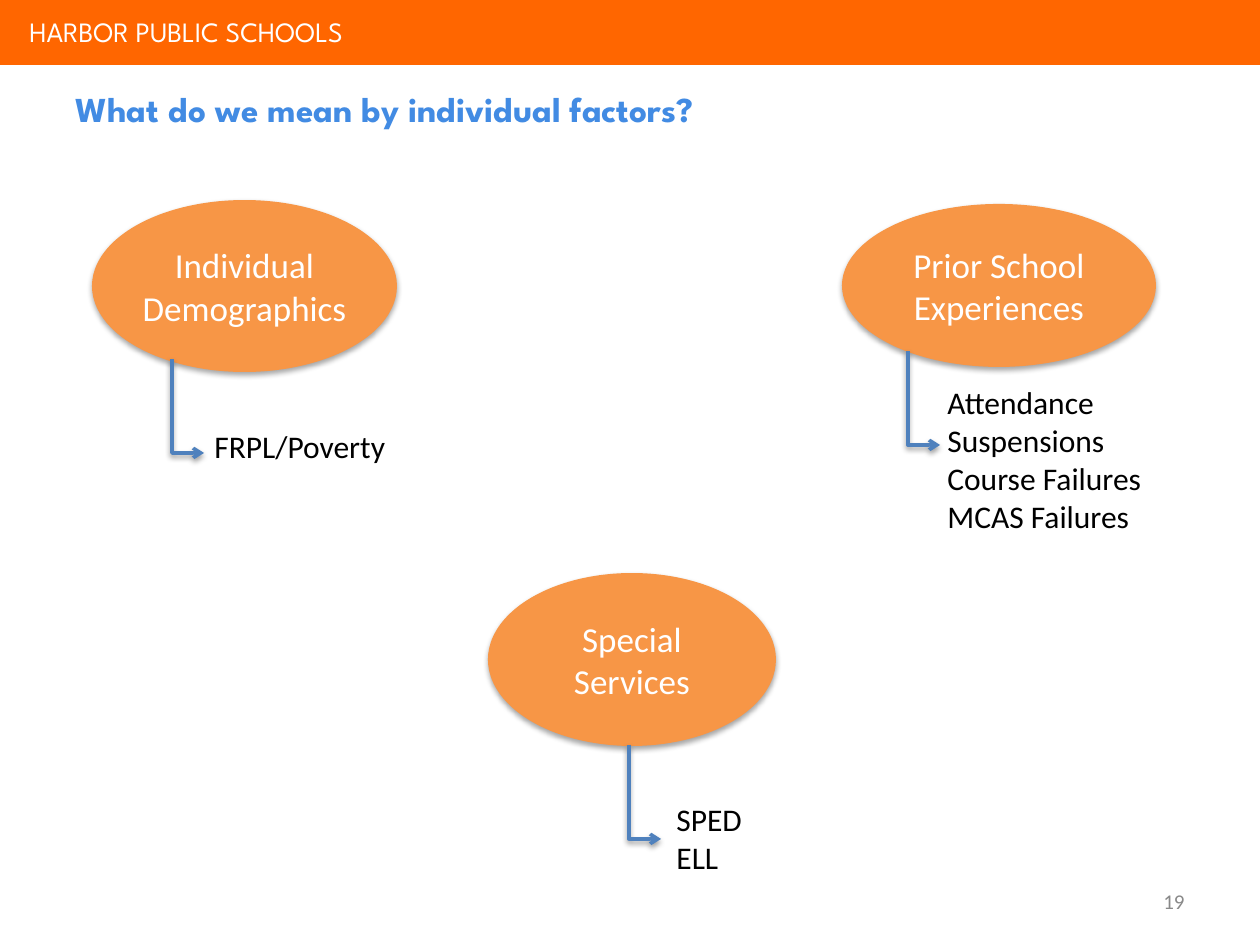
from lxml import etree
from pptx import Presentation
from pptx import util as u
from pptx.dml.color import RGBColor
from pptx.enum import shapes, text
from pptx.oxml.ns import qn

PX = 914400 / 126
COLORS = {
    "bar": "FF6600", "title": "428BE3", "factor": "F79646", "arrow": "4F81BD",
    "white": "FFFFFF", "black": "000000", "number": "898989",
}
HEADING, BODY = "League Spartan", "Calibri"
DROP, RUN = 94, 32  # height and width of each elbow arrow

# name lines, ellipse box, arrow start, example lines, example box
FACTORS = [
    (["Individual Demographics"], (92, 200, 305, 172), (172, 359),
     ["FRPL/Poverty"], (202, 421, 198, 50)),
    (["Special Services"], (488, 573, 288, 173), (629, 745),
     ["SPED", "ELL"], (664, 794, 92, 89)),
    (["Prior School", "Experiences"], (842, 204, 314, 163), (908, 351),
     ["Attendance", "Suspensions", "Course Failures", "MCAS Failures"],
     (935, 377, 222, 165)),
]


def emu(*lengths):
    return [u.Emu(round(n * PX)) for n in lengths]


def write(sp, lines, font, size, color, align=text.PP_ALIGN.LEFT, wrap=True):
    tf = sp.text_frame
    tf.text = "\n".join(lines)
    tf.word_wrap = wrap
    for p in tf.paragraphs:
        p.alignment = align
        p.font.name = font
        p.font.size = u.Pt(size)
        p.font.color.rgb = RGBColor.from_string(COLORS[color])
    return tf


prs = Presentation()
prs.slide_width, prs.slide_height = emu(1260, 945)
s = prs.slides.add_slide(prs.slide_layouts[5])

# Header
bar = s.shapes.add_shape(shapes.MSO_SHAPE.RECTANGLE, *emu(0, 0, 1260, 65))
bar.shadow.inherit = False
bar.fill.solid()
bar.fill.fore_color.rgb = RGBColor.from_string(COLORS["bar"])
bar.line.fill.background()
district = s.shapes.add_textbox(*emu(17, 8, 381, 47))
write(district, ["HARBOR PUBLIC SCHOOLS"], HEADING, 16, "white", wrap=False)

title = s.shapes.title
title.left, title.top, title.width, title.height = emu(63, 81, 1172, 105)
tf = write(title, ["What do we mean by individual factors?"], HEADING, 20, "title")
tf.vertical_anchor = text.MSO_ANCHOR.TOP
tf.auto_size = text.MSO_AUTO_SIZE.NONE
tf.paragraphs[0].font.bold = True

# Factors, each with an arrow to its examples; ellipses and arrows keep the theme shadow
for name, oval_box, (x, y), examples, examples_box in FACTORS:
    oval = s.shapes.add_shape(shapes.MSO_SHAPE.OVAL, *emu(*oval_box))
    oval.fill.solid()
    oval.fill.fore_color.rgb = RGBColor.from_string(COLORS["factor"])
    oval.line.fill.background()
    tf = write(oval, name, BODY, 20, "white", text.PP_ALIGN.CENTER)
    tf.vertical_anchor = text.MSO_ANCHOR.MIDDLE
    tf.margin_left = tf.margin_right = tf.margin_top = tf.margin_bottom = 0

    # The elbow is laid out sideways, then turned so that it drops before it runs right
    left, top = x + (RUN - DROP) / 2, y + (DROP - RUN) / 2
    arrow = s.shapes.add_connector(
        shapes.MSO_CONNECTOR.ELBOW, *emu(left + DROP, top, left, top + RUN))
    arrow.line.color.rgb = RGBColor.from_string(COLORS["arrow"])
    arrow.line.width = u.Pt(2)
    props = arrow.element.spPr
    props.find(qn("a:xfrm")).set("rot", "16200000")
    guides = props.find(qn("a:prstGeom")).get_or_add_avLst()
    etree.SubElement(guides, qn("a:gd"), name="adj1", fmla="val 100000")
    etree.SubElement(props.find(qn("a:ln")), qn("a:tailEnd"), type="arrow")

    box = s.shapes.add_textbox(*emu(*examples_box))
    write(box, examples, BODY, 18, "black", wrap=False)

# Slide number
number = s.shapes.add_textbox(*emu(903, 876, 294, 50))
tf = write(number, ["19"], BODY, 12, "number", text.PP_ALIGN.RIGHT)
tf.vertical_anchor = text.MSO_ANCHOR.MIDDLE

prs.save("out.pptx")
